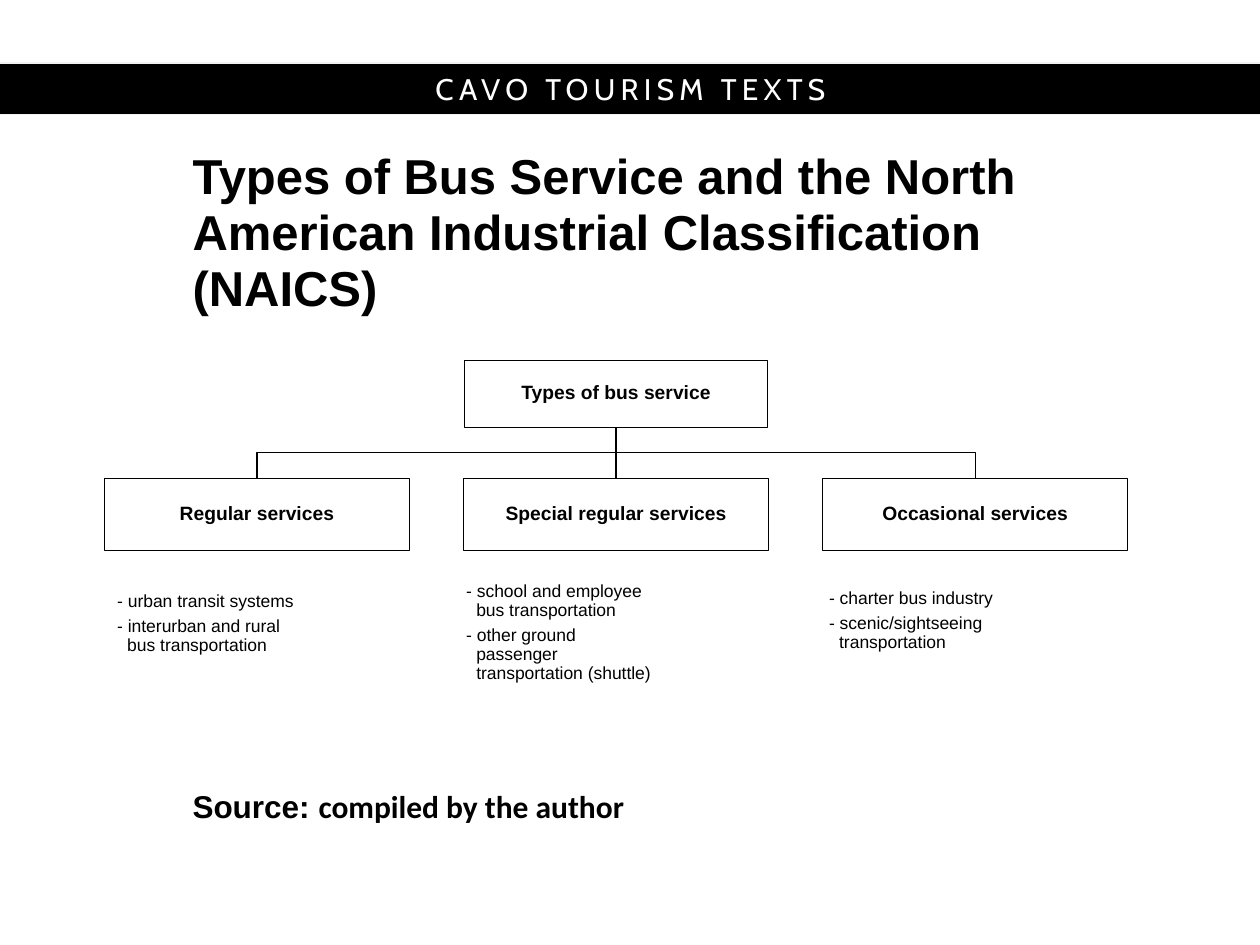
from dataclasses import dataclass

import pptx
import pptx.dml.color
import pptx.enum.shapes
import pptx.enum.text
import pptx.oxml.ns
import pptx.util
from lxml import etree

Inches = pptx.util.Inches
Pt = pptx.util.Pt
ALIGN = pptx.enum.text.PP_ALIGN
ANCHOR = pptx.enum.text.MSO_ANCHOR


@dataclass(frozen=True)
class Theme:
    ink: str = "000000"
    paper: str = "FFFFFF"
    banner_edge: str = "F2F2F2"
    sans: str = "Arial"
    banner_font: str = "Cabin"
    credit_font: str = "Calibri"
    title_size: float = 28
    credit_size: float = 18
    banner_size: float = 17
    box_size: float = 11
    list_size: float = 10


THEME = Theme()

BRANCH_LEFT, BRANCH_STEP, BRANCH_TOP = 0.83, 2.85, 3.8
BRANCH_WIDTH, BRANCH_HEIGHT = 2.42, 0.57
ROOT_WIDTH, ROOT_TOP, ROOT_HEIGHT = 2.4, 2.86, 0.53
BEND_Y = 3.59

# Heading, list left, list top, list entries
BRANCHES = [
    ("Regular services", 0.92, 4.69,
     ["- urban transit systems", "- interurban and rural\vbus transportation"]),
    ("Special regular services", 3.69, 4.61,
     ["- school and employee\vbus transportation",
      "- other ground\vpassenger\vtransportation (shuttle)"]),
    ("Occasional services", 6.57, 4.67,
     ["- charter bus industry", "- scenic/sightseeing\vtransportation"]),
]


def rgb(value):
    return pptx.dml.color.RGBColor.from_string(value)


def apply(target, values):
    for name, value in values.items():
        setattr(target, name, value)


def style_font(font, size, name=THEME.sans, bold=False, color=THEME.ink):
    apply(font, {"size": Pt(size), "name": name, "bold": bold})
    font.color.rgb = rgb(color)


def set_frame(frame, anchor, inset=None):
    apply(frame, {"word_wrap": True, "vertical_anchor": anchor})
    if inset is not None:
        sides = ("left", "top", "right", "bottom")
        apply(frame, {f"margin_{side}": Inches(inset) for side in sides})


def add_box(slide, place, text, fill, edge, edge_width):
    """Add a filled rectangle with centred text; return it and its paragraph."""
    box = slide.shapes.add_shape(
        pptx.enum.shapes.MSO_SHAPE.RECTANGLE, *map(Inches, place))
    box.shadow.inherit = False
    box.fill.solid()
    box.fill.fore_color.rgb = rgb(fill)
    box.line.color.rgb = rgb(edge)
    box.line.width = Pt(edge_width)
    set_frame(box.text_frame, ANCHOR.MIDDLE, 0.01)
    label = box.text_frame.paragraphs[0]
    label.alignment = ALIGN.CENTER
    label.add_run().text = text
    return box, label


def add_text(slide, place, anchor, inset=None):
    frame = slide.shapes.add_textbox(*map(Inches, place)).text_frame
    set_frame(frame, anchor, inset)
    return frame


def add_banner(slide):
    _, label = add_box(slide, (-0.08, 0.5, 10.17, 0.41), "CAVO TOURISM TEXTS",
                       THEME.ink, THEME.banner_edge, 0.75)
    run = label.runs[0]
    style_font(run.font, THEME.banner_size, THEME.banner_font, color=THEME.paper)
    run._r.get_or_add_rPr().set("spc", "300")


def add_title(slide):
    frame = add_text(slide, (1.43, 1.18, 7.87, 1.34), ANCHOR.TOP)
    apply(frame, {"margin_top": 0, "margin_bottom": 0})
    title = frame.paragraphs[0]
    title.line_spacing = Pt(32)
    run = title.add_run()
    run.text = ("Types of Bus Service and the North American "
                "Industrial Classification (NAICS)")
    style_font(run.font, THEME.title_size, bold=True)


def add_credit(slide):
    credit = add_text(slide, (1.43, 6.2, 7.87, 0.4), ANCHOR.TOP).paragraphs[0]
    for text, font_name in (("Source: ", THEME.sans),
                            ("compiled by the author", THEME.credit_font)):
        run = credit.add_run()
        run.text = text
        style_font(run.font, THEME.credit_size, font_name, bold=True)


def add_service(slide, place, text):
    box, label = add_box(slide, place, text, THEME.paper, THEME.ink, 0.5)
    label.line_spacing = 0.9
    style_font(label.runs[0].font, THEME.box_size, bold=True)
    return box


def add_examples(slide, left, top, entries):
    """List entries with a hanging indent under each dash."""
    frame = add_text(slide, (left, top, 2.25, 0.85), ANCHOR.TOP, 0.01)
    for index, entry in enumerate(entries):
        item = frame.add_paragraph() if index else frame.paragraphs[0]
        item.text = entry
        hang = Inches(0.08)
        properties = item._p.get_or_add_pPr()
        properties.set("marL", str(hang))
        properties.set("indent", str(-hang))
        apply(item, {"line_spacing": 0.9, "space_after": Pt(3.5)})
        for run in item.runs:
            style_font(run.font, THEME.list_size)


def style_line(line):
    line.color.rgb = rgb(THEME.ink)
    line.width = Pt(0.75)


def add_straight_link(slide, root, branch):
    link = slide.shapes.add_connector(
        pptx.enum.shapes.MSO_CONNECTOR.STRAIGHT, 0, 0, 0, 0)
    link.begin_connect(root, 2)
    link.end_connect(branch, 0)
    style_line(link.line)
    etree.SubElement(link._element.spPr, pptx.oxml.ns.qn("a:effectLst"))


def add_bent_link(slide, root_x, branch_x):
    start, *rest = [(Inches(x), Inches(y)) for x, y in (
        (root_x, ROOT_TOP + ROOT_HEIGHT), (root_x, BEND_Y),
        (branch_x, BEND_Y), (branch_x, BRANCH_TOP))]
    builder = slide.shapes.build_freeform(*start)
    builder.add_line_segments(rest, close=False)
    link = builder.convert_to_shape()
    link.shadow.inherit = False
    link.fill.background()
    style_line(link.line)


def add_service_tree(slide):
    lefts = [BRANCH_LEFT + BRANCH_STEP * i for i in range(len(BRANCHES))]
    centres = [left + BRANCH_WIDTH / 2 for left in lefts]
    root_x = centres[1]
    for branch_x in (centres[0], centres[2]):
        add_bent_link(slide, root_x, branch_x)
    root = add_service(
        slide, (root_x - ROOT_WIDTH / 2, ROOT_TOP, ROOT_WIDTH, ROOT_HEIGHT),
        "Types of bus service")
    for left, centre, branch in zip(lefts, centres, BRANCHES):
        heading, list_left, list_top, entries = branch
        service = add_service(
            slide, (left, BRANCH_TOP, BRANCH_WIDTH, BRANCH_HEIGHT), heading)
        if centre == root_x:
            add_straight_link(slide, root, service)
        add_examples(slide, list_left, list_top, entries)


def main():
    deck = pptx.Presentation()
    apply(deck, {"slide_width": Inches(10), "slide_height": Inches(7.5)})
    slide = deck.slides.add_slide(deck.slide_layouts[6])
    add_banner(slide)
    add_credit(slide)
    add_title(slide)
    add_service_tree(slide)
    deck.save("out.pptx")


if __name__ == "__main__":
    main()
